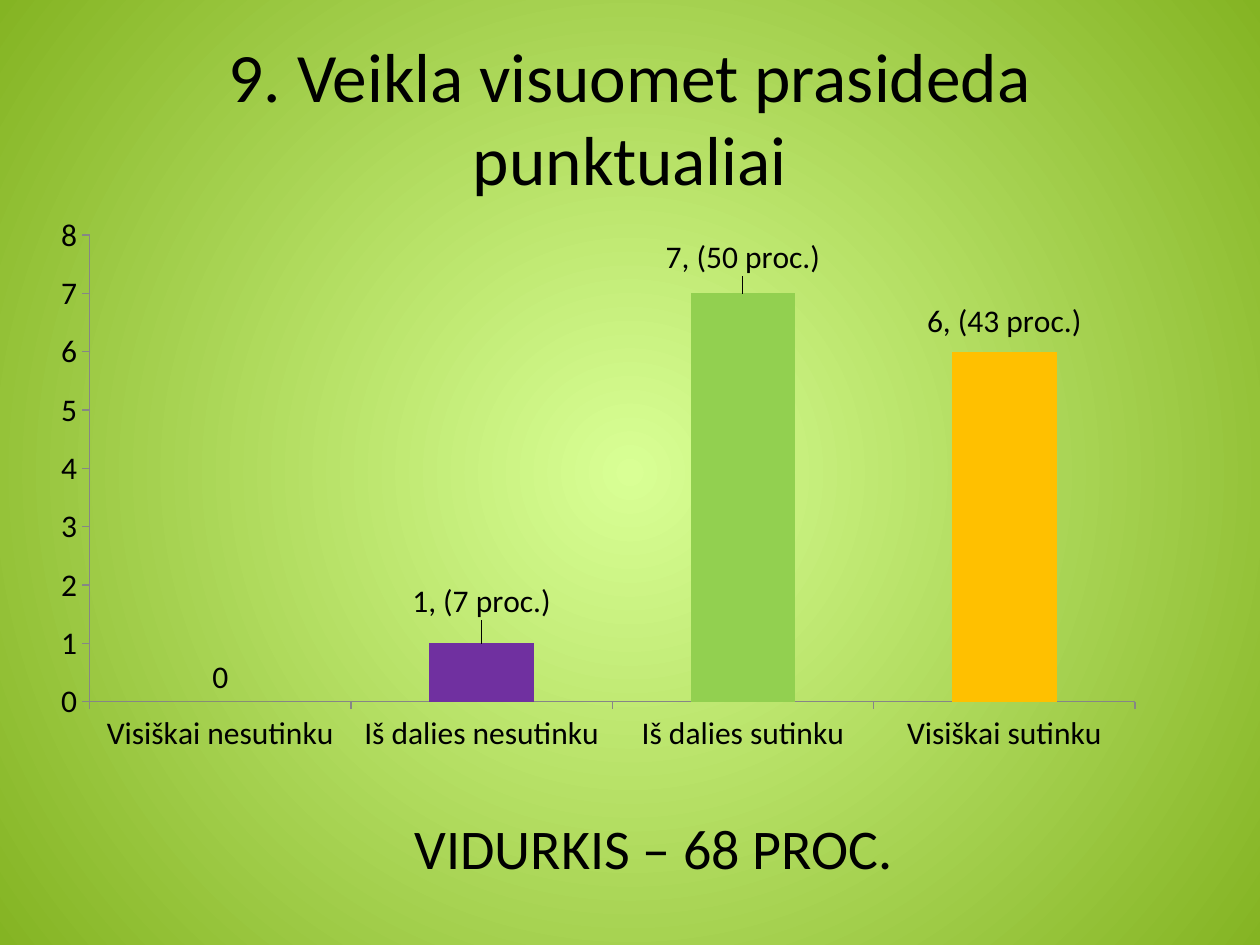
import pptx
import pptx.util
import pptx.chart.data
import pptx.dml.color
import pptx.enum.chart
import pptx.enum.text
import pptx.oxml
import pptx.oxml.ns

HUES = {"ink": "000000", "glow": "D9FF95", "edge": "84B423", "axis": "868686",
        "base": "94C600", "part": "7030A0", "most": "92D050", "full": "FFC000"}
FONT = "Calibri"
BARS = [("Visiškai nesutinku", 0, "base", None, 0),
        ("Iš dalies nesutinku", 1, "part", "1, (7 proc.)", -0.03),
        ("Iš dalies sutinku", 7, "most", "7, (50 proc.)", -0.02),
        ("Visiškai sutinku", 6, "full", "6, (43 proc.)", -0.01)]


def tint(name):
    """Return the named colour."""
    return pptx.dml.color.RGBColor.from_string(HUES[name])


def style(font, size):
    """Set the face, size and colour of a font."""
    font.name, font.size = FONT, pptx.util.Pt(size)
    font.color.rgb = tint("ink")


def layout(parts):
    """Build a manual chart layout from its named values."""
    node = pptx.oxml.parse_xml(
        f'<c:layout {pptx.oxml.ns.nsdecls("c")}><c:manualLayout/></c:layout>')
    for tag, val in parts.items():
        pptx.oxml.ns.qn("c:" + tag)
        item = node[0].makeelement(pptx.oxml.ns.qn("c:" + tag), {"val": str(val)})
        node[0].append(item)
    return node


def paint(slide):
    """Fill the background with a glow from the centre."""
    fill = slide.background.fill
    fill.gradient()
    for stop, name, spot in zip(fill.gradient_stops, ("glow", "edge"), (0, 1)):
        stop.color.rgb, stop.position = tint(name), spot
    grad = slide.element.find(".//" + pptx.oxml.ns.qn("a:gradFill"))
    ray = grad.find(pptx.oxml.ns.qn("a:lin"))
    grad.replace(ray, pptx.oxml.parse_xml(
        f'<a:path {pptx.oxml.ns.nsdecls("a")} path="circle">'
        '<a:fillToRect l="50000" t="50000" r="50000" b="50000"/></a:path>'))


def write(slide, box, text, size):
    """Place one centred line of text in a box."""
    frame = slide.shapes.add_textbox(*box).text_frame
    frame.word_wrap = True
    frame.vertical_anchor = pptx.enum.text.MSO_ANCHOR.MIDDLE
    para = frame.paragraphs[0]
    para.alignment = pptx.enum.text.PP_ALIGN.CENTER
    run = para.add_run()
    run.text = text
    style(run.font, size)


def label(point, text, lift):
    """Give a bar its own label, raised by a share of the chart height."""
    mark = point.data_label
    run = mark.text_frame.paragraphs[0].add_run()
    run.text = text
    style(run.font, 18)
    mark.position = pptx.enum.chart.XL_LABEL_POSITION.OUTSIDE_END
    return layout({"x": 0, "y": lift})


def graph(slide, box):
    """Draw the column chart of answers."""
    data = pptx.chart.data.CategoryChartData()
    data.categories = [bar[0] for bar in BARS]
    data.add_series("Series 1", [bar[1] for bar in BARS])
    kind = pptx.enum.chart.XL_CHART_TYPE.COLUMN_CLUSTERED
    chart = slide.shapes.add_chart(kind, *box, data).chart
    chart.has_legend = chart.has_title = False
    style(chart.font, 18)
    for axis in (chart.category_axis, chart.value_axis):
        axis.has_major_gridlines = False
        axis.major_tick_mark = pptx.enum.chart.XL_TICK_MARK.OUTSIDE
        axis.format.line.color.rgb = tint("axis")
    chart.value_axis.minimum_scale, chart.value_axis.maximum_scale = 0, 8
    chart.value_axis.major_unit = 1
    plot = chart.plots[0]
    plot.gap_width, plot.vary_by_categories = 150, False
    row = plot.series[0]
    row.format.fill.solid()
    row.format.fill.fore_color.rgb = tint("base")
    row.data_labels.show_value = True
    row.data_labels.position = pptx.enum.chart.XL_LABEL_POSITION.OUTSIDE_END
    style(row.data_labels.font, 18)
    moves = []
    for spot, (_, _, name, text, lift) in enumerate(BARS):
        if text:
            point = row.points[spot]
            point.format.fill.solid()
            point.format.fill.fore_color.rgb = tint(name)
            moves.append(label(point, text, lift))
    root = chart.element
    for mark, move in zip(root.iter(pptx.oxml.ns.qn("c:dLbl")), moves):
        for old in mark.findall(pptx.oxml.ns.qn("c:layout")):
            mark.remove(old)
        mark.insert(1, move)
    area = root.find(".//" + pptx.oxml.ns.qn("c:plotArea"))
    for old in area.findall(pptx.oxml.ns.qn("c:layout")):
        area.remove(old)
    area.insert(0, layout({"layoutTarget": "inner", "xMode": "edge", "yMode": "edge",
                           "x": 0.048, "y": 0.034, "w": 0.924, "h": 0.759}))


def main():
    """Build the slide and save it."""
    deck = pptx.Presentation()
    deck.slide_width, deck.slide_height = pptx.util.Inches(10), pptx.util.Inches(7.5)
    wide, high = deck.slide_width, deck.slide_height

    def area(left, top, width, height):
        """Turn percentages of the slide into a box."""
        return [int(part * side / 100) for part, side in
                zip((left, top, width, height), (wide, high, wide, high))]

    slide = deck.slides.add_slide(deck.slide_layouts[6])
    paint(slide)
    write(slide, area(5, 4, 90, 16.67), "9. Veikla visuomet prasideda punktualiai", 39.6)
    graph(slide, area(2.8, 22.67, 89.8, 65.07))
    write(slide, area(9, 85.33, 85.8, 8.53), "VIDURKIS – 68 PROC.", 32)
    deck.save("out.pptx")


if __name__ == "__main__":
    main()
